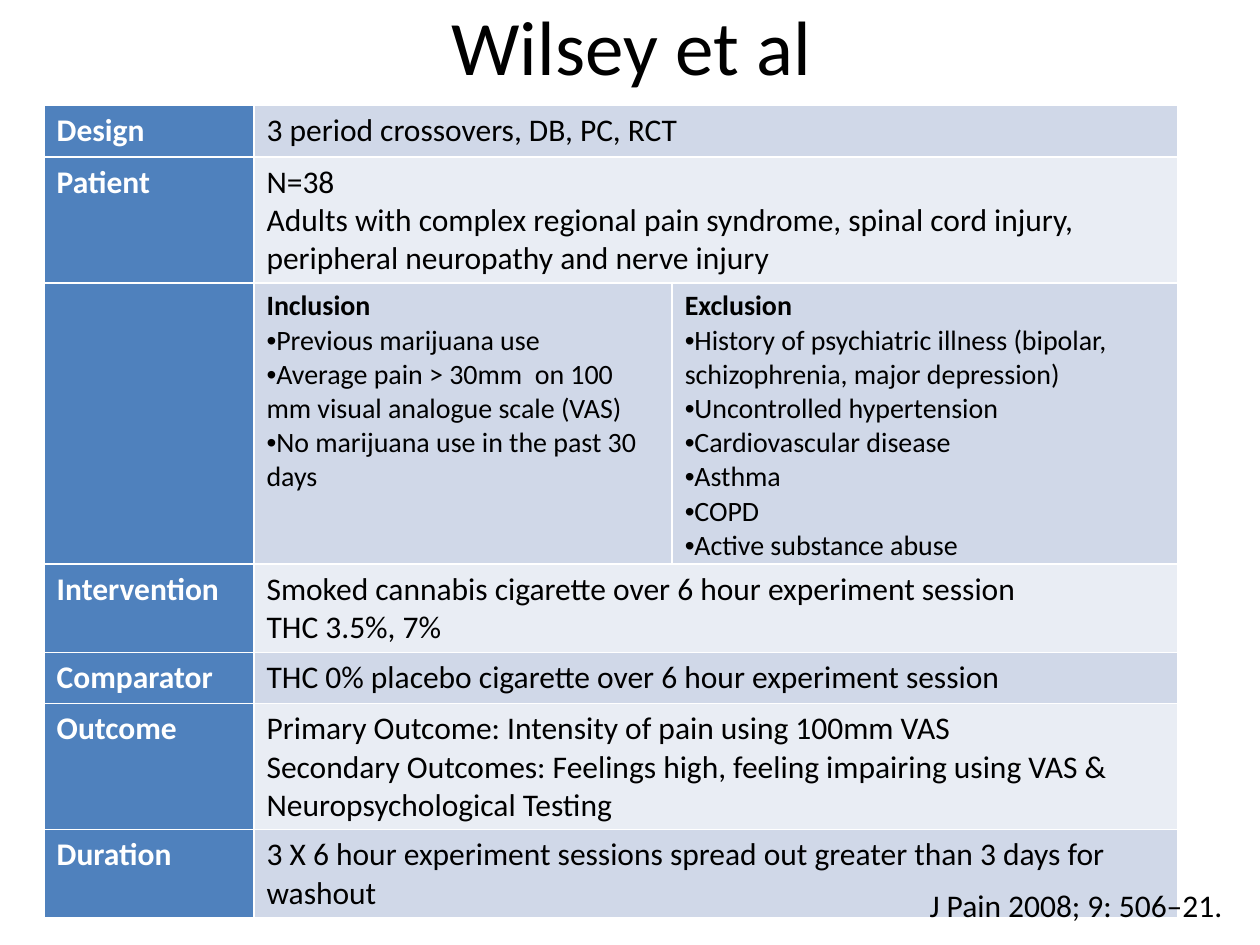
from dataclasses import dataclass

from lxml.etree import SubElement
from pptx import Presentation
from pptx.dml.color import RGBColor
from pptx.enum.text import MSO_ANCHOR, MSO_AUTO_SIZE, PP_ALIGN
from pptx.oxml.ns import qn
from pptx.util import Cm, Pt


@dataclass(frozen=True)
class Theme:
    font: str = "Calibri"
    title_size: int = 44
    body_size: int = 18
    criteria_size: int = 16
    text: str = "000000"
    label_text: str = "FFFFFF"
    label_fill: str = "4F81BD"
    bands: tuple = ("D0D8E8", "E9EDF4")


THEME = Theme()
TITLE = "Wilsey et al"
CITATION = "J Pain 2008; 9: 506–21."

INCLUSION = [
    "Inclusion",
    "Previous marijuana use",
    "Average pain > 30mm  on 100 mm visual analogue scale (VAS)",
    "No marijuana use in the past 30 days",
]
EXCLUSION = [
    "Exclusion",
    "History of psychiatric illness (bipolar, schizophrenia, major depression)",
    "Uncontrolled hypertension",
    "Cardiovascular disease",
    "Asthma",
    "COPD",
    "Active substance abuse",
]
# Each row is a label and its cells; a single cell spans both content columns.
STUDY_ROWS = [
    ("Design", [["3 period crossovers, DB, PC, RCT"]]),
    ("Patient", [[
        "N=38",
        "Adults with complex regional pain syndrome, spinal cord injury, "
        "peripheral neuropathy and nerve injury",
    ]]),
    ("", [INCLUSION, EXCLUSION]),
    ("Intervention", [[
        "Smoked cannabis cigarette over 6 hour experiment session",
        "THC 3.5%, 7%",
    ]]),
    ("Comparator", [["THC 0% placebo cigarette over 6 hour experiment session"]]),
    ("Outcome", [[
        "Primary Outcome: Intensity of pain using 100mm VAS",
        "Secondary Outcomes: Feelings high, feeling impairing using VAS & "
        "Neuropsychological Testing",
    ]]),
    ("Duration", [[
        "3 X 6 hour experiment sessions spread out greater than 3 days for washout",
    ]]),
]
COLUMN_WIDTHS = (4.23, 8.43, 10.2)
ROW_HEIGHT = 1.03


def write_lines(text_frame, lines, size, color=THEME.text, bold=False):
    text_frame.text = "\n".join(lines)
    for paragraph in text_frame.paragraphs:
        font = paragraph.font
        for run in paragraph.runs:
            font = run.font
        font.name = THEME.font
        font.size = Pt(size)
        font.bold = bold
        font.color.rgb = RGBColor.from_string(color)


def fill_cell(cell, color):
    cell.fill.solid()
    cell.fill.fore_color.rgb = RGBColor.from_string(color)


def write_criteria(text_frame, lines):
    """Write a bold heading followed by bulleted criteria."""
    write_lines(text_frame, lines, THEME.criteria_size)
    heading, *criteria = text_frame.paragraphs
    heading.runs[0].font.bold = True
    for paragraph in criteria:
        properties = paragraph._p.get_or_add_pPr()
        SubElement(properties, qn("a:buFont"), typeface="Arial")
        SubElement(properties, qn("a:buChar"), char="•")


def add_study_table(slide):
    table = slide.shapes.add_table(
        len(STUDY_ROWS), len(COLUMN_WIDTHS), Cm(0.89), Cm(2.13),
        Cm(sum(COLUMN_WIDTHS)), Cm(ROW_HEIGHT * len(STUDY_ROWS))).table
    table.first_row = table.horz_banding = False
    for column, width in zip(table.columns, COLUMN_WIDTHS):
        column.width = Cm(width)

    for index, (label, contents) in enumerate(STUDY_ROWS):
        table.rows[index].height = Cm(ROW_HEIGHT)
        label_cell, *content_cells = [
            table.cell(index, column) for column in range(len(COLUMN_WIDTHS))]
        fill_cell(label_cell, THEME.label_fill)
        write_lines(label_cell.text_frame, [label], THEME.body_size,
                    THEME.label_text, bold=True)
        for cell in content_cells:
            fill_cell(cell, THEME.bands[index % 2])
        if len(contents) == 1:
            content_cells[0].merge(content_cells[-1])
            write_lines(content_cells[0].text_frame, contents[0], THEME.body_size)
        else:
            for cell, lines in zip(content_cells, contents):
                write_criteria(cell.text_frame, lines)


def add_title(slide):
    text_frame = slide.shapes.add_textbox(
        Cm(1.3), Cm(-0.69), Cm(22.86), Cm(3.18)).text_frame
    text_frame.word_wrap = True
    text_frame.vertical_anchor = MSO_ANCHOR.MIDDLE
    write_lines(text_frame, [TITLE], THEME.title_size)
    text_frame.paragraphs[0].alignment = PP_ALIGN.CENTER


def add_citation(slide):
    text_frame = slide.shapes.add_textbox(
        Cm(18.49), Cm(17.73), Cm(6.5), Cm(1.02)).text_frame
    text_frame.word_wrap = False
    text_frame.auto_size = MSO_AUTO_SIZE.SHAPE_TO_FIT_TEXT
    write_lines(text_frame, [CITATION], THEME.body_size)


def main():
    presentation = Presentation()
    presentation.slide_width, presentation.slide_height = Cm(25.4), Cm(19.05)
    slide = presentation.slides.add_slide(presentation.slide_layouts[6])
    add_title(slide)
    add_study_table(slide)
    add_citation(slide)
    presentation.save("out.pptx")


if __name__ == "__main__":
    main()
